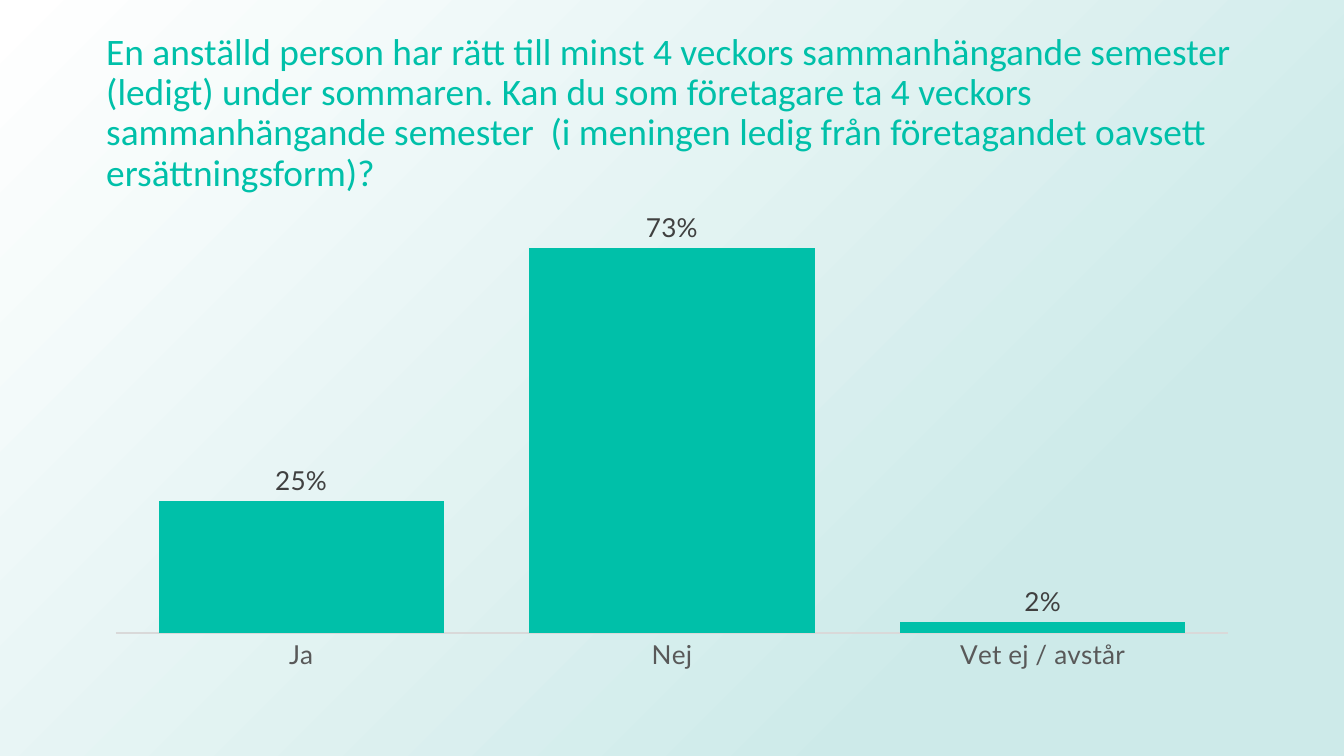
from lxml.etree import fromstring
from pptx import Presentation
from pptx.chart.data import CategoryChartData
from pptx.dml.color import RGBColor
from pptx.enum.chart import XL_CHART_TYPE as ChartType
from pptx.enum.chart import XL_LABEL_POSITION as LabelPosition
from pptx.enum.chart import XL_TICK_MARK as TickMark
from pptx.enum.shapes import MSO_SHAPE as Shape
from pptx.enum.text import MSO_ANCHOR as Anchor
from pptx.enum.text import MSO_AUTO_SIZE as AutoSize
from pptx.enum.text import PP_ALIGN as Align
from pptx.oxml.ns import nsdecls
from pptx.util import Inches, Pt

WIDTH = Inches(10)
HEIGHT = WIDTH * 9 // 16  # widescreen
MARGIN = Inches(0.69)

COLORS = {
    "teal": "00C0A9",
    "mist": "CDEAE9",
    "white": "FFFFFF",
    "axis": "D9D9D9",
    "category": "595959",
    "label": "404040",
}

QUESTION = (
    "En anställd person har rätt till minst 4 veckors sammanhängande semester "
    "(ledigt) under sommaren. Kan du som företagare ta 4 veckors "
    "sammanhängande semester  (i meningen ledig från företagandet oavsett "
    "ersättningsform)?"
)
ANSWERS = {"Ja": 0.25, "Nej": 0.73, "Vet ej / avstår": 0.02}


def color(name):
    return RGBColor.from_string(COLORS[name])


def set_attributes(target, values):
    for name, value in values.items():
        setattr(target, name, value)


def format_font(font, name, size, tone):
    set_attributes(font, {"name": name, "size": Pt(size), "bold": False})
    font.color.rgb = color(tone)


def frame(top, height):
    """Content column, with top and height in inches."""
    return {
        "left": MARGIN,
        "top": Inches(top),
        "width": WIDTH - 2 * MARGIN,
        "height": Inches(height),
    }


def add_backdrop(page):
    box = page.shapes.add_shape(Shape.RECTANGLE, 0, 0, WIDTH, HEIGHT)
    box.shadow.inherit = False
    box.line.fill.background()
    box.fill.gradient()
    # Gradient that spreads from the lower right corner
    old = box.fill._xPr.find("{*}gradFill")
    stops = "".join(
        f'<a:gs pos="{share * 1000}"><a:srgbClr val="{COLORS[name]}"/></a:gs>'
        for share, name in ((23, "mist"), (100, "white"))
    )
    gradient = fromstring(
        f'<a:gradFill {nsdecls("a")} rotWithShape="1"><a:gsLst>{stops}</a:gsLst>'
        '<a:path path="circle"><a:fillToRect l="100000" t="100000"/></a:path>'
        '<a:tileRect r="-100000" b="-100000"/></a:gradFill>'
    )
    old.getparent().replace(old, gradient)
    # Send behind the title
    page.shapes._spTree.insert(2, box._element)


def fill_title(page):
    title = page.shapes.title
    set_attributes(title, frame(0.3, 1.09))
    text = title.text_frame
    text.text = QUESTION
    set_attributes(text, {
        "word_wrap": True,
        "auto_size": AutoSize.NONE,
        "vertical_anchor": Anchor.MIDDLE,
    })
    para = text.paragraphs[0]
    set_attributes(para, {"alignment": Align.LEFT, "line_spacing": 0.9})
    format_font(para.runs[0].font, "Calibri", 20, "teal")


def add_answer_chart(page):
    data = CategoryChartData(number_format="0%")
    data.categories = list(ANSWERS)
    data.add_series("Series 1", list(ANSWERS.values()))
    chart = page.shapes.add_chart(
        ChartType.COLUMN_CLUSTERED, *frame(1.5, 3.56).values(), data
    ).chart
    set_attributes(chart, {"has_legend": False, "has_title": False})
    format_font(chart.font, "Lato", 14, "label")

    # Axes
    categories = chart.category_axis
    set_attributes(categories, {
        "major_tick_mark": TickMark.NONE,
        "minor_tick_mark": TickMark.NONE,
        "has_major_gridlines": False,
    })
    format_font(categories.tick_labels.font, "Lato", 14, "category")
    categories.format.line.color.rgb = color("axis")
    categories.format.line.width = Pt(0.75)
    set_attributes(chart.value_axis, {
        "visible": False,
        "has_major_gridlines": False,
    })
    set_attributes(chart.value_axis.tick_labels, {
        "number_format": "0%",
        "number_format_is_linked": False,
    })

    # Columns and their labels
    plot = chart.plots[0]
    set_attributes(plot, {"gap_width": 30, "vary_by_categories": False})
    series = plot.series[0]
    series.format.fill.solid()
    series.format.fill.fore_color.rgb = color("teal")
    labels = series.data_labels
    set_attributes(labels, {
        "show_value": True,
        "number_format": "0%",
        "number_format_is_linked": False,
        "position": LabelPosition.OUTSIDE_END,
    })
    format_font(labels.font, "Lato", 14, "label")


def main():
    deck = Presentation()
    set_attributes(deck, {"slide_width": WIDTH, "slide_height": HEIGHT})
    page = deck.slides.add_slide(deck.slide_layouts[5])
    add_backdrop(page)
    fill_title(page)
    add_answer_chart(page)
    deck.save("out.pptx")


if __name__ == "__main__":
    main()
